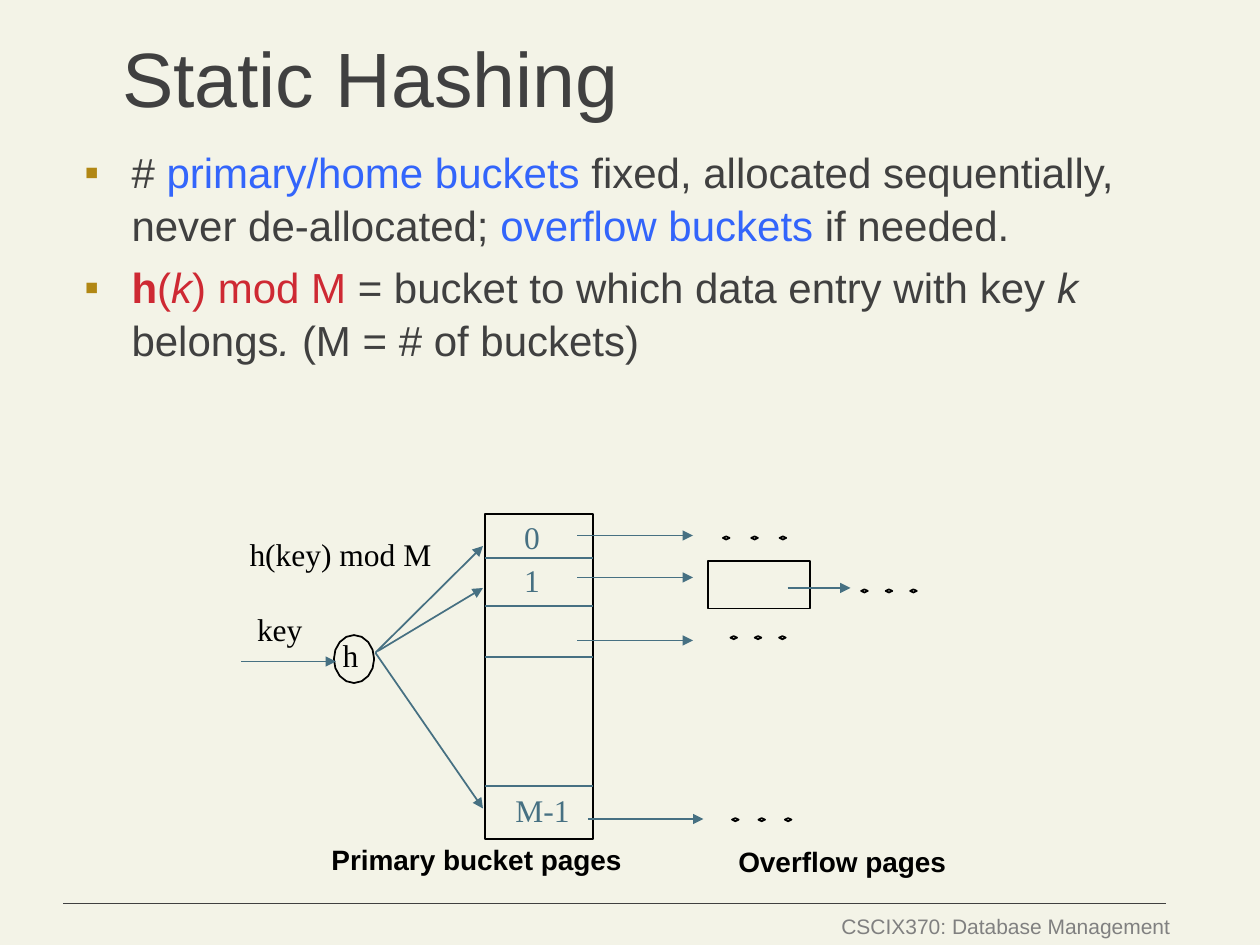
import math
import pptx
import pptx.dml.color
import pptx.enum.shapes
import pptx.enum.text
import pptx.oxml
import pptx.oxml.ns
import pptx.util

Pt = pptx.util.Pt
RGB = pptx.dml.color.RGBColor.from_string
ALIGN = pptx.enum.text.PP_ALIGN
ANCHOR = pptx.enum.text.MSO_ANCHOR
C = {"bg": "F3F3E7", "text": "404040", "footer": "808080", "blue": "3365FB",
     "red": "CE2933", "bullet": "B18714", "teal": "467082", "black": "000000"}
A_NS = 'xmlns:a="http://schemas.openxmlformats.org/drawingml/2006/main"'

prs = pptx.Presentation()
prs.slide_width, prs.slide_height = Pt(720), Pt(540)
s = prs.slides.add_slide(prs.slide_layouts[6])
s.background.fill.solid()
s.background.fill.fore_color.rgb = RGB(C["bg"])


def add_text(box, paragraphs, size, font, wrap=False, bullet=False, **para_fmt):
    """Add a text box; each paragraph is a list of (text, colour, font format)."""
    tf = s.shapes.add_textbox(*map(Pt, box)).text_frame
    frame_fmt = {"word_wrap": wrap, "margin_left": Pt(3.6), "margin_right": Pt(3.6),
                 "margin_top": Pt(3.6), "margin_bottom": Pt(3.6)}
    for name, value in frame_fmt.items():
        setattr(tf, name, value)
    for i, runs in enumerate(paragraphs):
        p = tf.paragraphs[0] if i == 0 else tf.add_paragraph()
        for name, value in para_fmt.items():
            setattr(p, name, value)
        if i:
            p.space_before = Pt(5)
        if bullet:
            pPr = p._p.get_or_add_pPr()
            pPr.set("marL", str(Pt(27)))
            pPr.set("indent", str(Pt(-27)))
            for xml in (f'<a:buClr {A_NS}><a:srgbClr val="{C["bullet"]}"/></a:buClr>',
                        f'<a:buFont {A_NS} typeface="Arial"/>',
                        f'<a:buChar {A_NS} char="▪"/>'):
                pPr.append(pptx.oxml.parse_xml(xml))
        for text, color, fmt in runs:
            r = p.add_run()
            r.text = text
            r.font.color.rgb = RGB(C[color])
            for name, value in {"size": Pt(size), "name": font, **fmt}.items():
                setattr(r.font, name, value)
    return tf


def add_line(x1, y1, x2, y2, color="teal", width=1, arrow=False):
    """Add a straight line, with an arrowhead at its end if asked."""
    sp = s.shapes.add_connector(pptx.enum.shapes.MSO_CONNECTOR.STRAIGHT,
                                *map(Pt, (x1, y1, x2, y2)))
    sp.line.color.rgb = RGB(C[color])
    sp.line.width = Pt(width)
    if arrow:
        tail = pptx.oxml.parse_xml(f'<a:tailEnd {A_NS} type="triangle"/>')
        sp.line._get_or_add_ln().append(tail)
    sp._element.spPr.append(pptx.oxml.parse_xml(f"<a:effectLst {A_NS}/>"))


# Footer
add_line(666, 516.2, 36, 516.2, "text", 0.75)
add_text((475.9, 518.4, 196.6, 20.9),
         [[("CSCIX370: Database Management", "footer", {})]], 12, "Arial",
         alignment=ALIGN.RIGHT)

# Title
tf = add_text((66.2, 12.2, 612, 72), [[("Static Hashing", "text", {})]], 44, "Arial",
              wrap=True, line_spacing=0.85)
tf.vertical_anchor = ANCHOR.MIDDLE

# Bullets
italic = {"italic": True}
add_text((44.6, 79, 635.8, 174.2), [
    [("# ", "text", {}), ("primary/home buckets", "blue", {}),
     (" fixed, allocated sequentially, never de-allocated; ", "text", {}),
     ("overflow buckets", "blue", {}), (" if needed.", "text", {})],
    [("h", "red", {"bold": True}), ("(", "red", {}), ("k", "red", italic),
     (") mod M ", "red", {}), ("= bucket to which data entry with key", "text", {}),
     (" k ", "text", italic), ("belongs", "text", {}), (". ", "text", italic),
     ("(M = # of buckets)", "text", {})],
], 24, "Arial", wrap=True, bullet=True, line_spacing=1.05)

# Bucket column and overflow page
outlined = []
for box in ((277.2, 293.8, 61.9, 185.8), (404.6, 320.4, 58.3, 27.4)):
    outlined.append(s.shapes.add_shape(pptx.enum.shapes.MSO_SHAPE.RECTANGLE, *map(Pt, box)))

# Hash node (16 sides) and ellipsis diamonds (4 sides): centre, radii, sides
polygons = [(202.3, 376.6, 11.5, 13.7, 16)]
for x, y, step in ((415, 307.4, 16.2), (494, 337.7, 14), (419.3, 364.4, 13.9),
                   (420.2, 468.4, 15.1)):
    polygons += [(x + i * step, y, 1.9, 0.9, 4) for i in range(3)]
for x, y, rx, ry, sides in polygons:
    angles = [2 * math.pi * i / sides for i in range(sides)]
    points = [(Pt(x + rx * math.cos(a)), Pt(y + ry * math.sin(a))) for a in angles]
    fb = s.shapes.build_freeform(*points[0])
    fb.add_line_segments(points[1:], close=True)
    outlined.append(fb.convert_to_shape())

for sp in outlined:
    sp.shadow.inherit = False
    sp.fill.background()
    sp.line.color.rgb = RGB(C["black"])
    sp.line.width = Pt(1)

# Diagram labels
for text, x, y, w, color in (
        ("h(key) mod M", 139, 302.4, 112.3, "black"), ("h", 192.2, 360, 17.3, "black"),
        ("key", 143.3, 344.9, 33.8, "black"), ("0", 295.9, 292.3, 17.3, "teal"),
        ("1", 295.9, 316.8, 17.3, "teal"), ("M-1", 290.9, 448.6, 38.9, "teal")):
    add_text((x, y, w, 27.4), [[(text, color, {})]], 18, "Times New Roman")
for text, x, y, w in (("Primary bucket pages", 185.8, 478.1, 174.2),
                      ("Overflow pages", 418.3, 479.2, 127.4)):
    add_text((x, y, w, 24.5), [[(text, "black", {"bold": True})]], 16, "Arial")

# Arrows into the hash node, to the buckets and to the overflow pages
for ends in ((138, 378, 192, 378),
             (216, 372, 276, 336), (214.5, 373, 276, 312), (214.5, 373, 276, 462),
             (330, 306, 396, 306), (330, 330, 396, 330), (330, 366, 396, 366),
             (336, 468, 402, 468), (450, 336, 486, 336)):
    add_line(*ends, arrow=True)

# Bucket dividers
for y in (318.8, 346.5, 375.6, 449.2):
    add_line(277.2, y, 339.1, y)

prs.save("out.pptx")
